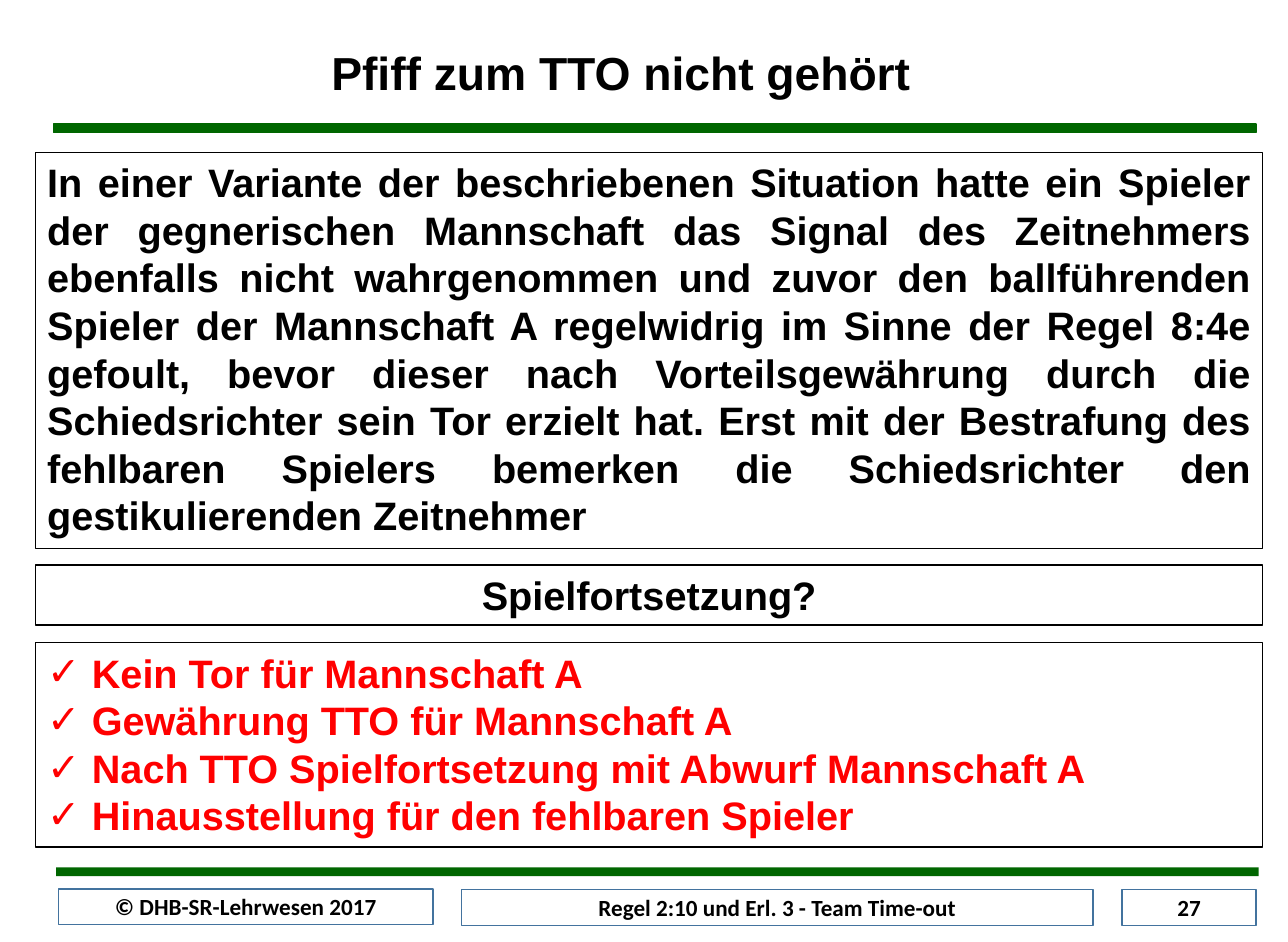
from lxml import etree
from pptx import Presentation
from pptx.dml.color import RGBColor
from pptx.enum.shapes import MSO_SHAPE
from pptx.enum.text import MSO_ANCHOR, MSO_AUTO_SIZE, PP_ALIGN
from pptx.oxml.ns import qn
from pptx.util import Pt

RECTANGLE = MSO_SHAPE.RECTANGLE
TOP, MIDDLE = MSO_ANCHOR.TOP, MSO_ANCHOR.MIDDLE
GROW, FIXED = MSO_AUTO_SIZE.SHAPE_TO_FIT_TEXT, MSO_AUTO_SIZE.NONE
LEFT, CENTER, JUSTIFY = PP_ALIGN.LEFT, PP_ALIGN.CENTER, PP_ALIGN.JUSTIFY

COLORS = {"black": "000000", "white": "FFFFFF", "red": "FF0000",
          "green": "006600", "blue": "43739E"}

SLIDE_WIDTH, SLIDE_HEIGHT = 779.76, 570.24
TITLE = "Pfiff zum TTO nicht gehört"
SITUATION = (
    "In einer Variante der beschriebenen Situation hatte ein Spieler der "
    "gegnerischen Mannschaft das Signal des Zeitnehmers ebenfalls nicht "
    "wahrgenommen und zuvor den ballführenden Spieler der Mannschaft A "
    "regelwidrig im Sinne der Regel 8:4e gefoult, bevor dieser nach "
    "Vorteilsgewährung durch die Schiedsrichter sein Tor erzielt hat. Erst mit "
    "der Bestrafung des fehlbaren Spielers bemerken die Schiedsrichter den "
    "gestikulierenden Zeitnehmer"
)
QUESTION = "Spielfortsetzung?"
ANSWERS = [
    "Kein Tor für Mannschaft A",
    "Gewährung TTO für Mannschaft A",
    "Nach TTO Spielfortsetzung mit Abwurf Mannschaft A",
    "Hinausstellung für den fehlbaren Spieler",
]
BARS = [(32.4, 75, "green"), (34, 525.1, None)]
BAR_WIDTH, BAR_HEIGHT = 728, 5.3
FOOTERS = [
    ("© DHB-SR-Lehrwesen 2017", 35.4, 538, 226.8),
    ("Regel 2:10 und Erl. 3 - Team Time-out", 279.4, 538.5, 382.3),
    ("27", 679.2, 538.5, 81.4),
]
FOOTER_HEIGHT = 21.8
PANEL_LEFT, PANEL_WIDTH = 21.5, 743
PANELS = [
    ([SITUATION], 92.2, 239.8, JUSTIFY, "black", False),
    ([QUESTION], 342, 36.4, CENTER, "black", False),
    (ANSWERS, 389, 123.8, LEFT, "red", True),
]
BULLET_INDENT = 27


def color(name):
    return RGBColor.from_string(COLORS[name])


def add_rectangle(slide, left, top, width, height, fill, line, line_width=0.75):
    shape = slide.shapes.add_shape(RECTANGLE, Pt(left), Pt(top), Pt(width), Pt(height))
    shape.shadow.inherit = False
    shape.fill.solid()
    shape.fill.fore_color.rgb = color(fill)
    if line:
        shape.line.color.rgb = color(line)
        shape.line.width = Pt(line_width)
    else:
        shape.line.fill.background()
    return shape


def add_check_mark(paragraph):
    properties = paragraph._p.get_or_add_pPr()
    properties.set("marL", str(Pt(BULLET_INDENT)))
    properties.set("indent", str(-Pt(BULLET_INDENT)))
    etree.SubElement(properties, qn("a:buFont")).set("typeface", "Arial")
    etree.SubElement(properties, qn("a:buChar")).set("char", "✓")


def write(shape, lines, size, alignment, font="Arial", ink="black",
          checked=False, anchor=TOP, sizing=GROW):
    frame = shape.text_frame
    frame.word_wrap = True
    frame.auto_size = sizing
    frame.vertical_anchor = anchor
    for index, line in enumerate(lines):
        paragraph = frame.add_paragraph() if index else frame.paragraphs[0]
        paragraph.alignment = alignment
        if checked:
            add_check_mark(paragraph)
        run = paragraph.add_run()
        run.text = line
        run.font.name = font
        run.font.size = Pt(size)
        run.font.bold = True
        run.font.color.rgb = color(ink)


def main():
    """Build the team time-out slide."""
    presentation = Presentation()
    presentation.slide_width = Pt(SLIDE_WIDTH)
    presentation.slide_height = Pt(SLIDE_HEIGHT)
    slide = presentation.slides.add_slide(presentation.slide_layouts[6])

    for left, top, line in BARS:
        add_rectangle(slide, left, top, BAR_WIDTH, BAR_HEIGHT, "green", line)
    for text, left, top, width in FOOTERS:
        footer = add_rectangle(slide, left, top, width, FOOTER_HEIGHT, "white", "blue", 1)
        write(footer, [text], 14, CENTER, "Calibri", anchor=MIDDLE, sizing=FIXED)
    for lines, top, height, alignment, ink, checked in PANELS:
        panel = add_rectangle(slide, PANEL_LEFT, top, PANEL_WIDTH, height, "white", "black")
        write(panel, lines, 24, alignment, ink=ink, checked=checked)
    title = slide.shapes.add_textbox(Pt(169.2), Pt(23), Pt(413.3), Pt(41))
    write(title, [TITLE], 28, CENTER)

    presentation.save("out.pptx")


if __name__ == "__main__":
    main()
